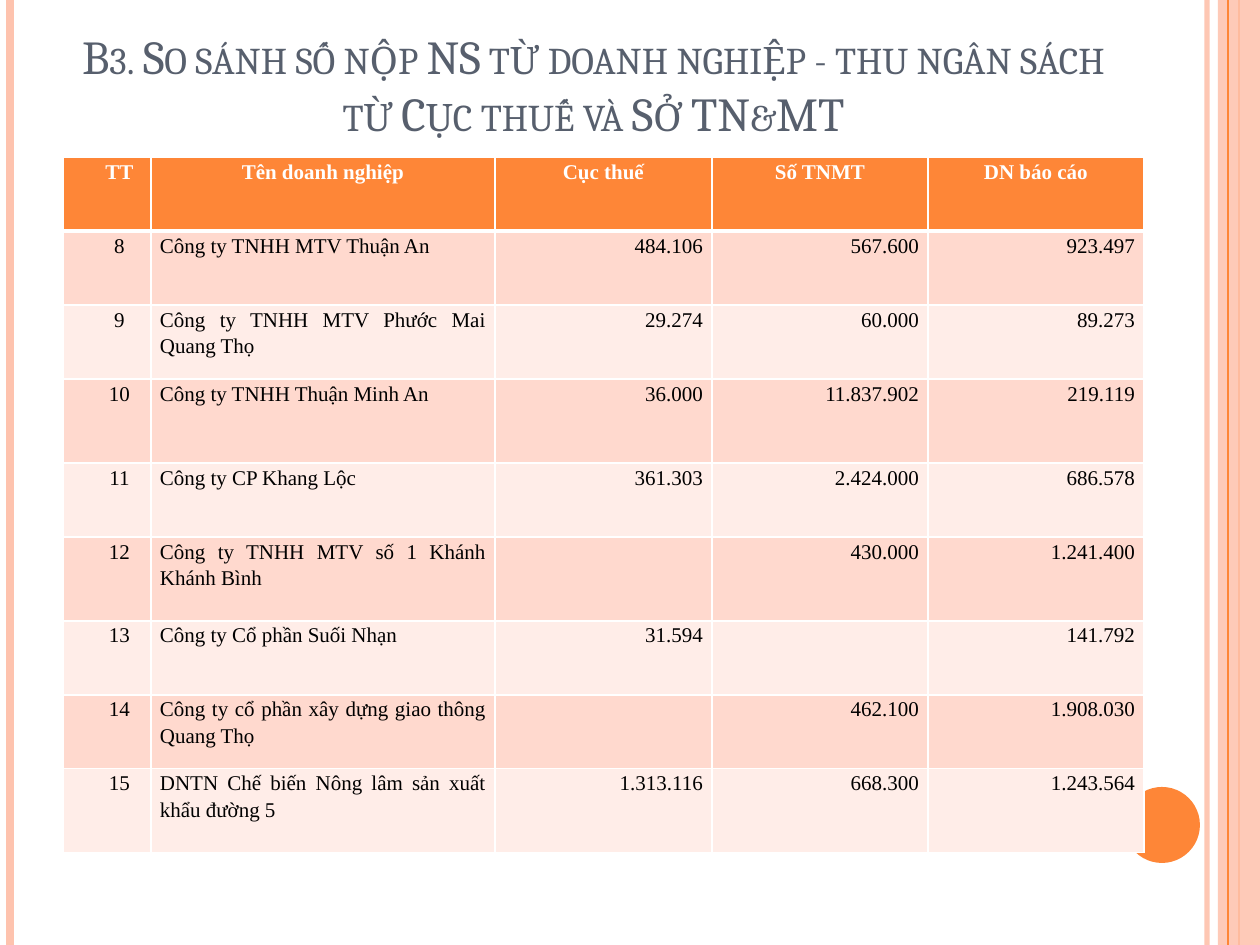
import pptx
import pptx.util
import pptx.dml.color
import pptx.enum.shapes
import pptx.enum.text
import pptx.oxml
import pptx.oxml.ns

COLORS = {
    "orange": "FE8637", "peach": "FEC3AE", "slate": "575F6D",
    "band_dark": "FFD9CE", "band_light": "FFEDE8",
    "white": "FFFFFF", "black": "000000",
}
PX = 914400 / 126
SLIDE_W, SLIDE_H = 1260, 945
Align = pptx.enum.text.PP_ALIGN
NS = pptx.oxml.ns.nsdecls("a")


def px(length):
    return pptx.util.Emu(round(length * PX))


def rgb(name):
    return pptx.dml.color.RGBColor.from_string(COLORS[name])


def apply(target, values):
    for name, value in values.items():
        setattr(target, name, value)


class Deck:
    """Holds the style and the current slide."""
    title_font = {"name": "Cambria", "size": pptx.util.Pt(27), "bold": False}
    cell_font = {"name": "Times New Roman", "size": pptx.util.Pt(12)}
    cell_margins = {"margin_left": px(9), "margin_right": px(9),
                    "margin_top": 0, "margin_bottom": 0}
    cell_spacing = {"line_spacing": 1.15, "space_before": pptx.util.Pt(4),
                    "space_after": pptx.util.Pt(4)}

    def __init__(self):
        self.prs = pptx.Presentation()
        apply(self.prs, {"slide_width": px(SLIDE_W), "slide_height": px(SLIDE_H)})
        self.slide = self.prs.slides.add_slide(self.prs.slide_layouts[5])

    def set_alpha(self, fill_parent, percent):
        color = fill_parent.find(".//" + pptx.oxml.ns.qn("a:srgbClr"))
        color.append(pptx.oxml.parse_xml(f'<a:alpha {NS} val="{percent * 1000}"/>'))

    def stripe(self, x, color, width, alpha=100):
        line = self.slide.shapes.add_connector(
            pptx.enum.shapes.MSO_CONNECTOR.STRAIGHT, px(x), 0, px(x), px(SLIDE_H))
        line.line.color.rgb = rgb(color)
        line.line.width = pptx.util.Pt(width)
        properties = line._element.spPr
        if alpha < 100:
            self.set_alpha(properties, alpha)
        properties.append(pptx.oxml.parse_xml(f"<a:effectLst {NS}/>"))

    def shape(self, kind, x, y, w, h, color, alpha=100):
        shape = self.slide.shapes.add_shape(kind, px(x), px(y), px(w), px(h))
        shape.shadow.inherit = False
        shape.fill.solid()
        shape.fill.fore_color.rgb = rgb(color)
        shape.line.fill.background()
        if alpha < 100:
            self.set_alpha(shape._element.spPr, alpha)

    def title(self, text, x, y, w, h):
        title = self.slide.shapes.title
        apply(title, {"left": px(x), "top": px(y), "width": px(w), "height": px(h)})
        frame = title.text_frame
        frame.text = text
        apply(frame, {"word_wrap": True,
                      "auto_size": pptx.enum.text.MSO_AUTO_SIZE.NONE,
                      "vertical_anchor": pptx.enum.text.MSO_ANCHOR.BOTTOM})
        paragraph = frame.paragraphs[0]
        paragraph.alignment = Align.CENTER
        run = paragraph.runs[0]
        apply(run.font, self.title_font)
        run.font.color.rgb = rgb("slate")
        run._r.get_or_add_rPr().set("cap", "small")

    def borders(self, cell, widths):
        properties = cell._tc.get_or_add_tcPr()
        for side, width in widths.items():
            properties.append(pptx.oxml.parse_xml(
                f'<a:ln{side} {NS} w="{width * 12700}"><a:solidFill>'
                f'<a:srgbClr val="{COLORS["white"]}"/></a:solidFill></a:ln{side}>'))

    def cell(self, cell, text, align, fill, color, bold, indent):
        apply(cell, self.cell_margins)
        cell.fill.solid()
        cell.fill.fore_color.rgb = rgb(fill)
        cell.text = text
        paragraph = cell.text_frame.paragraphs[0]
        apply(paragraph, self.cell_spacing)
        paragraph.alignment = align
        if indent:
            apply_xml = paragraph._p.get_or_add_pPr().set
            apply_xml("marL", "0")
            apply_xml("indent", str(px(indent)))
        for run in paragraph.runs:
            apply(run.font, self.cell_font)
            run.font.bold = bold
            run.font.color.rgb = rgb(color)

    def table(self, rows, x, y, col_widths, row_heights, aligns, first_indent):
        table = self.slide.shapes.add_table(
            len(rows), len(col_widths), px(x), px(y),
            px(sum(col_widths)), px(sum(row_heights))).table
        for column, width in zip(table.columns, col_widths):
            column.width = px(width)
        for r, (row, height) in enumerate(zip(rows, row_heights)):
            table.rows[r].height = px(height)
            header = r == 0
            fill = "orange" if header else "band_dark" if r % 2 else "band_light"
            for c, text in enumerate(row):
                cell = table.cell(r, c)
                # The rule under the header is thicker than the grid
                self.borders(cell, {"L": 1, "R": 1, "T": 3 if r == 1 else 1,
                                    "B": 3 if header else 1})
                self.cell(cell, text, Align.CENTER if header else aligns[c], fill,
                          "white" if header else "black", header,
                          first_indent if c == 0 else 0)


def main():
    deck = Deck()
    shapes = pptx.enum.shapes.MSO_SHAPE

    # Side stripes and circle
    deck.stripe(1207, "peach", 3, alpha=93)
    deck.stripe(10, "peach", 4.5)
    deck.stripe(1239, "orange", 1.5)
    deck.shape(shapes.RECTANGLE, 1218, 0, 42, SLIDE_H, "peach", alpha=87)
    deck.stripe(1228, "orange", 0.75)
    deck.shape(shapes.OVAL, 1124, 787, 76, 76, "orange")

    # Title
    deck.title("B3. So sánh số nộp NS từ doanh nghiệp - thu ngân sách "
               "từ Cục thuế và Sở TN&MT", 63, 0, 1061, 147)

    # Budget contributions by company
    header = ("TT", "Tên doanh nghiệp", "Cục thuế", "Số TNMT", "DN báo cáo")
    companies = [
        ("Công ty TNHH MTV Thuận An", "484.106", "567.600", "923.497"),
        ("Công ty TNHH MTV Phước Mai Quang Thọ", "29.274", "60.000", "89.273"),
        ("Công ty TNHH Thuận Minh An", "36.000", "11.837.902", "219.119"),
        ("Công ty CP Khang Lộc", "361.303", "2.424.000", "686.578"),
        ("Công ty TNHH MTV số 1 Khánh Khánh Bình", "", "430.000", "1.241.400"),
        ("Công ty Cổ phần Suối Nhạn", "31.594", "", "141.792"),
        ("Công ty cổ phần xây dựng giao thông Quang Thọ", "", "462.100", "1.908.030"),
        ("DNTN Chế biến Nông lâm sản xuất khẩu đường 5",
         "1.313.116", "668.300", "1.243.564"),
    ]
    numbered = [(str(n), *company) for n, company in enumerate(companies, 8)]
    low, tall = 74, 84
    deck.table([header, *numbered], 63, 157, [88, 344, 217, 216, 216],
               [low, low, low, tall, low, tall, low, low, tall],
               [Align.CENTER, Align.JUSTIFY] + [Align.RIGHT] * 3, first_indent=25)

    deck.prs.save("out.pptx")


if __name__ == "__main__":
    main()
